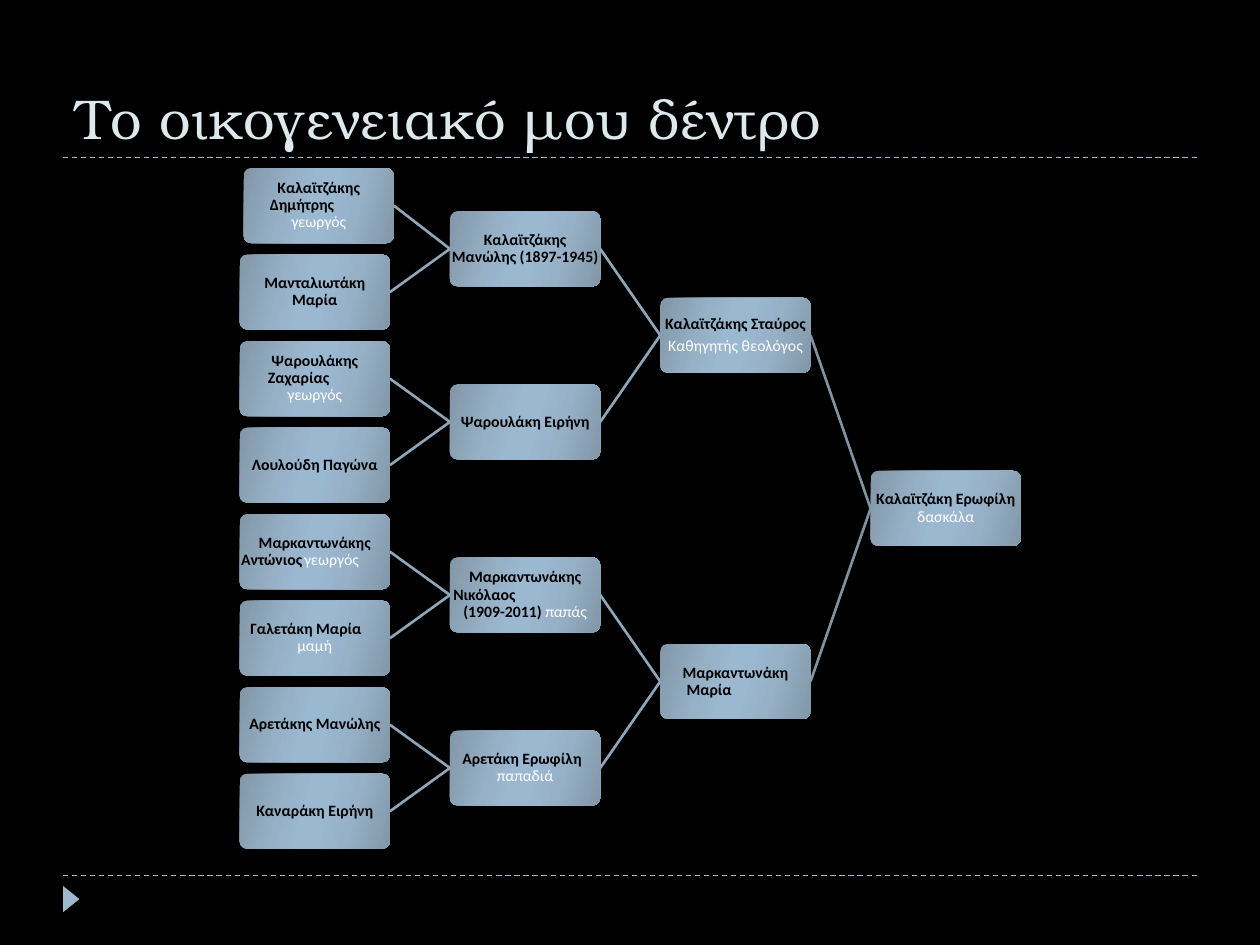
from typing import NamedTuple, Optional

from lxml import etree
from pptx import Presentation
from pptx.dml.color import RGBColor
from pptx.enum.dml import MSO_LINE
from pptx.enum.shapes import MSO_CONNECTOR, MSO_SHAPE
from pptx.enum.text import MSO_ANCHOR as Anchor, PP_ALIGN as Align
from pptx.oxml.ns import qn
from pptx.util import Cm, Pt

CARD_W, CARD_H = 3.03, 1.51
LEFT, COLUMN_STEP = 4.83, 4.24
TOP, ROW_STEP = 3.39, (15.6 - 3.39) / 7
INSET = 0.03
ACCENT, INK, WHITE = "9FB8CD", "000000", "FFFFFF"
SHEEN = [(0, "8297A8"), (30, "96B0C6"), (45, "9BB8D1"),
         (55, "9BB8D1"), (73, "96B0C6"), (100, "8297A8")]


class Line(NamedTuple):
    """One line of a card, centred unless it has a left indent in cm; gap in pt."""
    name: str = ""
    job: str = ""
    indent: Optional[float] = None
    gap: float = 0


GENERATIONS = [
    [
        [Line("Καλαϊτζάκης"), Line("Δημήτρης", indent=0.5), Line(job="γεωργός")],
        [Line("Μανταλιωτάκη Μαρία")],
        [Line("Ψαρουλάκης"), Line("Ζαχαρίας", indent=0.54), Line(job="γεωργός")],
        [Line("Λουλούδη Παγώνα")],
        [Line("Μαρκαντωνάκης"), Line("Αντώνιος\t", "γεωργός", indent=0)],
        [Line("Γαλετάκη Μαρία", indent=0.19), Line(job="μαμή")],
        [Line("Αρετάκης Μανώλης")],
        [Line("Καναράκη Ειρήνη")],
    ],
    [
        [Line("Καλαϊτζάκης Μανώλης (1897-1945)")],
        [Line("Ψαρουλάκη Ειρήνη")],
        [Line("Μαρκαντωνάκης"), Line("Νικόλαος", indent=0.04),
         Line("(1909-2011) ", "παπάς")],
        [Line("Αρετάκη Ερωφίλη", indent=0.22), Line(job="παπαδιά")],
    ],
    [
        [Line("Καλαϊτζάκης Σταύρος", gap=3.15), Line(job="Καθηγητής θεολόγος")],
        [Line("Μαρκαντωνάκη"), Line("Μαρία", indent=0.5)],
    ],
    [
        [Line("Καλαϊτζάκη Ερωφίλη"), Line(job="δασκάλα")],
    ],
]


def rgb(value):
    """Turn a hex string into a colour."""
    return RGBColor.from_string(value)


def write(paragraph, text, *, size=9, font="Calibri", color=INK, bold=False):
    """Add formatted text to a paragraph."""
    run = paragraph.add_run()
    run.text = text
    run.font.size, run.font.name, run.font.bold = Pt(size), font, bold
    run.font.color.rgb = rgb(color)


def card_position(generation, index):
    """Give the left edge and vertical middle of a person's card."""
    row = (index + 0.5) * 2 ** generation - 0.5
    nudge = 0.08 if generation == index == 0 else 0
    return (LEFT + generation * COLUMN_STEP + nudge,
            TOP + row * ROW_STEP + CARD_H / 2)


class TreeSlide:
    """Holds the slide and draws the elements of the family tree."""

    def __init__(self, deck):
        """Start a black slide with a title."""
        self.slide = deck.slides.add_slide(deck.slide_layouts[5])
        self.shapes = self.slide.shapes
        backdrop = self.slide.background.fill
        backdrop.solid()
        backdrop.fore_color.rgb = rgb(INK)

    def title(self, text):
        """Place the title."""
        heading = self.shapes.title
        heading.left, heading.top = Cm(1.27), Cm(0.43)
        heading.width, heading.height = Cm(22.86), Cm(2.74)
        heading.text_frame.vertical_anchor = Anchor.BOTTOM
        paragraph = heading.text_frame.paragraphs[0]
        paragraph.alignment = Align.LEFT
        write(paragraph, text, size=32, font="TeX Gyre Bonum", color="DDE9EC")

    def link(self, start, end, color, width=1.5, dash=None):
        """Draw a straight line between two points."""
        line = self.shapes.add_connector(
            MSO_CONNECTOR.STRAIGHT, *(Cm(v) for v in (*start, *end)))
        line.line.color.rgb = rgb(color)
        line.line.width = Pt(width)
        if dash:
            line.line.dash_style = dash
        etree.SubElement(line._element.spPr, qn("a:effectLst"))

    def shape(self, kind, left, top, width, height):
        """Add a preset shape without outline or shadow."""
        shape = self.shapes.add_shape(kind, Cm(left), Cm(top), Cm(width), Cm(height))
        shape.shadow.inherit = False
        shape.line.fill.background()
        return shape

    def marker(self):
        """Draw the footer triangle."""
        triangle = self.shape(MSO_SHAPE.ISOSCELES_TRIANGLE, 1.17, 17.96, 0.53, 0.33)
        triangle.rotation = 90
        triangle.fill.solid()
        triangle.fill.fore_color.rgb = rgb(ACCENT)

    def card(self, left, middle, lines):
        """Draw a person's card with its text."""
        top = middle - CARD_H / 2
        plate = self.shape(MSO_SHAPE.ROUNDED_RECTANGLE, left, top, CARD_W, CARD_H)
        plate.adjustments[0] = 0.1
        plate.fill.gradient()
        plate.fill.gradient_angle = 344
        stops = plate._element.spPr.find(".//" + qn("a:gsLst"))
        for stop in list(stops):
            stops.remove(stop)
        for percent, color in SHEEN:
            stop = etree.SubElement(stops, qn("a:gs"), pos=str(percent * 1000))
            etree.SubElement(stop, qn("a:srgbClr"), val=color)
        label = self.shapes.add_textbox(Cm(left), Cm(top), Cm(CARD_W), Cm(CARD_H))
        frame = label.text_frame
        frame.word_wrap = True
        frame.vertical_anchor = Anchor.MIDDLE
        frame.margin_left = frame.margin_right = Cm(INSET)
        frame.margin_top = frame.margin_bottom = Cm(INSET)
        for number, line in enumerate(lines):
            self.card_line(frame.add_paragraph() if number else frame.paragraphs[0], line)

    def card_line(self, paragraph, line):
        """Format and fill one line of a card."""
        paragraph.alignment = Align.CENTER if line.indent is None else Align.LEFT
        paragraph.line_spacing = 0.9
        paragraph.space_after = Pt(line.gap)
        properties = paragraph._p.get_or_add_pPr()
        properties.set("marL", str(Cm(line.indent or 0)))
        properties.set("indent", "0")
        if "\t" in line.name:
            tabs = etree.SubElement(properties, qn("a:tabLst"))
            etree.SubElement(tabs, qn("a:tab"),
                             pos=str(Cm(CARD_W - 2 * INSET)), algn="r")
        if line.name:
            write(paragraph, line.name, bold=True)
        if line.job:
            write(paragraph, line.job, color=WHITE)


def main():
    """Build the family tree slide."""
    deck = Presentation()
    deck.slide_width, deck.slide_height = Cm(25.4), Cm(19.05)
    tree = TreeSlide(deck)
    for rule_y in (17.65, 3.17):
        tree.link((1.27, rule_y), (24.13, rule_y), ACCENT, 0.75, MSO_LINE.DASH)
    tree.marker()
    tree.title("Το οικογενειακό μου δέντρο")
    for generation, people in enumerate(GENERATIONS):
        for index, lines in enumerate(people):
            left, middle = card_position(generation, index)
            if generation < len(GENERATIONS) - 1:
                child = card_position(generation + 1, index // 2)
                color = "7F93A4" if generation == 2 else "90A7BA"
                tree.link(child, (left + CARD_W, middle), color)
            tree.card(left, middle, lines)
    deck.save("out.pptx")


if __name__ == "__main__":
    main()
